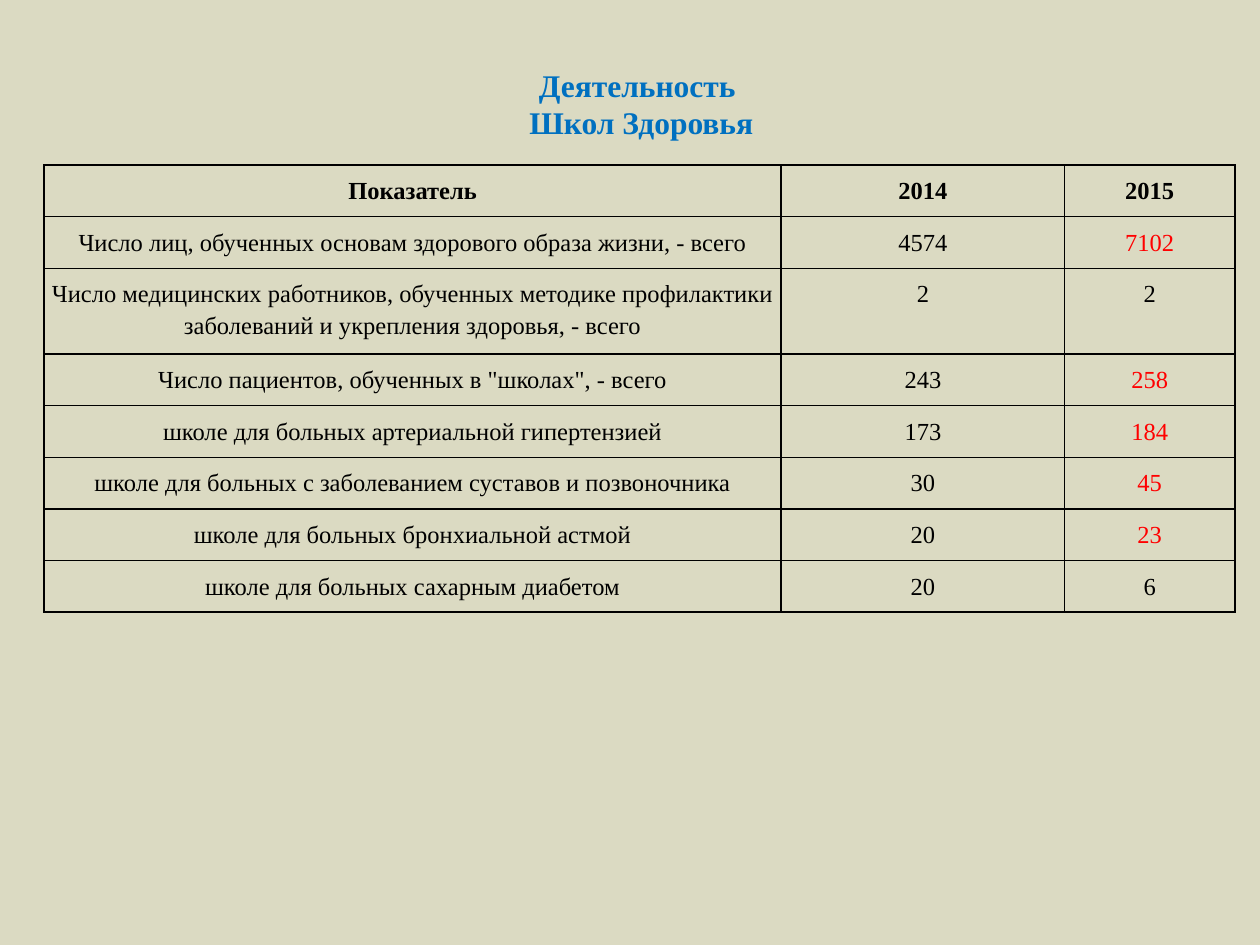
from dataclasses import dataclass

import pptx
import pptx.dml.color
import pptx.enum.text
import pptx.oxml
import pptx.oxml.ns
import pptx.util


@dataclass(frozen=True)
class Theme:
    font: str = "Times New Roman"
    background: str = "DBDAC2"
    title: str = "0070C0"
    text: str = "000000"
    growth: str = "FF0000"
    border: str = "000000"
    title_size: int = 18
    table_size: int = 14
    border_width: int = 1


HEADER = ("Показатель", "2014", "2015")
INDICATORS = [
    ("Число лиц, обученных основам здорового образа жизни, - всего", 4574, 7102),
    ("Число медицинских работников, обученных методике профилактики "
     "заболеваний и укрепления здоровья, - всего", 2, 2),
    ('Число пациентов, обученных в "школах", - всего', 243, 258),
    ("школе для больных артериальной гипертензией", 173, 184),
    ("школе для больных с заболеванием суставов и позвоночника", 30, 45),
    ("школе для больных бронхиальной астмой", 20, 23),
    ("школе для больных сахарным диабетом", 20, 6),
]
COLUMN_WIDTHS = (117, 45, 27)
ROW_HEIGHT, TALL_ROW_HEIGHT = 8.2, 13.6
TALL_ROW = 2


def rgb(value):
    return pptx.dml.color.RGBColor.from_string(value)


def grid(units):
    """Convert grid units (200 columns by 150 rows on the slide) to a length."""
    return pptx.util.Inches(round(units * 0.05, 2))


def write(tf, text, *, font, size, color, bold=False, spacing=None):
    """Fill a text frame with centred paragraphs, one per line of text."""
    for i, line in enumerate(text.split("\n")):
        p = tf.paragraphs[0] if i == 0 else tf.add_paragraph()
        p.alignment = pptx.enum.text.PP_ALIGN.CENTER
        p.line_spacing = spacing
        r = p.add_run()
        r.text = line
        r.font.name = font
        r.font.size = pptx.util.Pt(size)
        r.font.bold = bold
        r.font.color.rgb = rgb(color)


class Deck:
    def __init__(self, theme):
        self.theme = theme
        self.prs = pptx.Presentation()
        self.prs.slide_width = grid(200)
        self.prs.slide_height = grid(150)
        self.s = self.prs.slides.add_slide(self.prs.slide_layouts[6])
        fill = self.s.background.fill
        fill.solid()
        fill.fore_color.rgb = rgb(theme.background)

    def title(self, text, x, y, w, h):
        tf = self.s.shapes.add_textbox(grid(x), grid(y), grid(w), grid(h)).text_frame
        tf.word_wrap = True
        tf.margin_top = grid(1.4)
        write(tf, text, font=self.theme.font, size=self.theme.title_size,
              color=self.theme.title, bold=True)

    def table(self, x, y, widths, heights):
        frame = self.s.shapes.add_table(len(heights), len(widths), grid(x), grid(y),
                                        grid(sum(widths)), grid(sum(heights)))
        table = frame.table
        table.first_row = table.horz_banding = False
        for column, width in zip(table.columns, widths):
            column.width = grid(width)
        for row, height in zip(table.rows, heights):
            row.height = grid(height)
        return table

    def cell(self, cell, text, **style):
        cell.margin_left = cell.margin_right = pptx.util.Inches(0.04)
        cell.margin_top = cell.margin_bottom = pptx.util.Inches(0.07)
        cell.fill.background()
        self.borders(cell)
        write(cell.text_frame, text, font=self.theme.font,
              size=self.theme.table_size, spacing=1.15, **style)

    def borders(self, cell):
        properties = cell._tc.get_or_add_tcPr()
        width = pptx.util.Pt(self.theme.border_width)
        for i, side in enumerate("LRTB"):
            properties.insert(i, pptx.oxml.parse_xml(
                f'<a:ln{side} {pptx.oxml.ns.nsdecls("a")} w="{width}"><a:solidFill>'
                f'<a:srgbClr val="{self.theme.border}"/></a:solidFill></a:ln{side}>'))


def main():
    theme = Theme()
    deck = Deck(theme)
    deck.title("Деятельность \nШкол Здоровья", 65.4, 9, 72.8, 20.2)

    heights = [TALL_ROW_HEIGHT if i == TALL_ROW else ROW_HEIGHT
               for i in range(len(INDICATORS) + 1)]
    table = deck.table(7, 26.2, COLUMN_WIDTHS, heights)
    for col, text in enumerate(HEADER):
        deck.cell(table.cell(0, col), text, color=theme.text, bold=True)
    for row, (name, before, after) in enumerate(INDICATORS, start=1):
        after_color = theme.growth if after > before else theme.text
        deck.cell(table.cell(row, 0), name, color=theme.text)
        deck.cell(table.cell(row, 1), str(before), color=theme.text)
        deck.cell(table.cell(row, 2), str(after), color=after_color)
    deck.prs.save("out.pptx")


if __name__ == "__main__":
    main()
